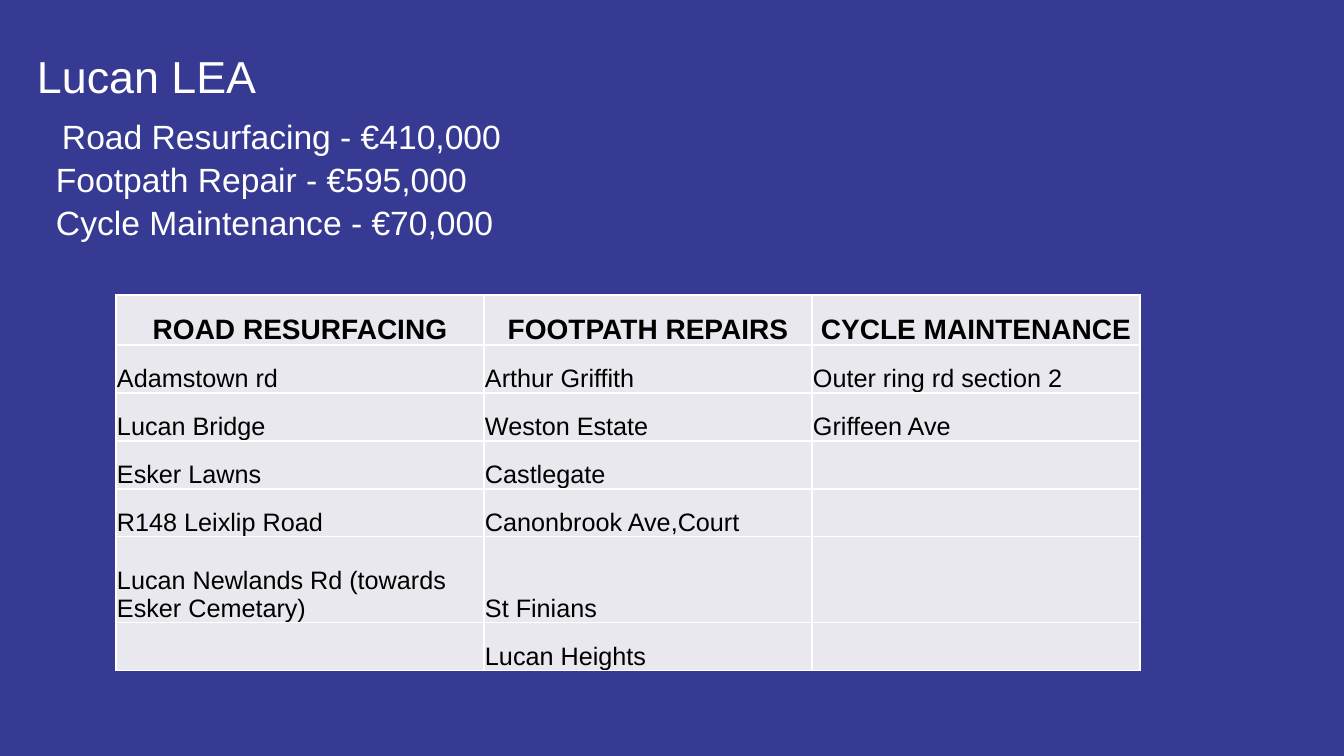
import lxml.etree
import pptx
import pptx.dml.color
import pptx.enum.text
import pptx.oxml.ns
import pptx.util

PX = 914400 / 100.8
COLOURS = {"background": "363A92", "light": "FFFFFF", "cell": "E8E8EE", "ink": "000000"}

HEADING = "Lucan LEA"
# text, left indent in px, space before in points
BUDGETS = [
    ("Road Resurfacing - €410,000", 25, 9),
    ("Footpath Repair - €595,000", 19, 2),
    ("Cycle Maintenance - €70,000", 19, 2),
]
COLUMN_WIDTHS = [368, 328, 328]
ROW_HEIGHTS = [50, 48, 48, 48, 48, 86, 48]
WORKS = [
    ["ROAD RESURFACING", "FOOTPATH REPAIRS", "CYCLE MAINTENANCE"],
    ["Adamstown rd", "Arthur Griffith", "Outer ring rd section 2"],
    ["Lucan Bridge", "Weston Estate", "Griffeen Ave"],
    ["Esker Lawns", "Castlegate", ""],
    ["R148 Leixlip Road", "Canonbrook Ave,Court", ""],
    ["Lucan Newlands Rd (towards Esker Cemetary)", "St Finians", ""],
    ["", "Lucan Heights", ""],
]


def px(length):
    return pptx.util.Emu(round(length * PX))


def colour(name):
    return pptx.dml.color.RGBColor.from_string(COLOURS[name])


class SlideBuilder:
    font_name = "Arial"

    def __init__(self, presentation):
        self.slide = presentation.slides.add_slide(presentation.slide_layouts[6])
        fill = self.slide.background.fill
        fill.solid()
        fill.fore_color.rgb = colour("background")

    def style(self, paragraph, size, colour_name, bold=False):
        for run in paragraph.runs:
            run.font.name = self.font_name
            run.font.size = pptx.util.Pt(size)
            run.font.bold = bold
            run.font.color.rgb = colour(colour_name)

    def title(self, left, top, width, height, heading, budgets):
        box = self.slide.shapes.add_textbox(px(left), px(top), px(width), px(height))
        frame = box.text_frame
        frame.word_wrap = True
        frame.margin_left = frame.margin_right = frame.margin_top = frame.margin_bottom = 0
        frame.text = heading
        self.style(frame.paragraphs[0], 32, "light")
        for text, indent, space in budgets:
            paragraph = frame.add_paragraph()
            paragraph.text = text
            paragraph.space_before = pptx.util.Pt(space)
            properties = paragraph._p.get_or_add_pPr()
            properties.set("marL", str(px(indent)))
            properties.set("indent", "0")
            self.style(paragraph, 24, "light")

    def borders(self, cell):
        properties = cell._tc.get_or_add_tcPr()
        qn = pptx.oxml.ns.qn
        for side in "LRTB":
            line = lxml.etree.SubElement(properties, qn(f"a:ln{side}"), w=str(pptx.util.Pt(1)))
            fill = lxml.etree.SubElement(line, qn("a:solidFill"))
            lxml.etree.SubElement(fill, qn("a:srgbClr"), val=COLOURS["light"])

    def cell(self, cell, text, is_header):
        self.borders(cell)
        cell.fill.solid()
        cell.fill.fore_color.rgb = colour("cell")
        cell.vertical_anchor = pptx.enum.text.MSO_ANCHOR.BOTTOM
        cell.margin_left = cell.margin_right = cell.margin_top = px(1)
        cell.margin_bottom = 0
        if not text:
            return
        cell.text_frame.text = text
        paragraph = cell.text_frame.paragraphs[0]
        if is_header:
            paragraph.alignment = pptx.enum.text.PP_ALIGN.CENTER
        self.style(paragraph, 20 if is_header else 18, "ink", is_header)

    def table(self, left, top, widths, heights, rows):
        frame = self.slide.shapes.add_table(
            len(rows), len(widths), px(left), px(top), px(sum(widths)), px(sum(heights)))
        table = frame.table
        table.first_row = table.horz_banding = False
        for column, width in zip(table.columns, widths):
            column.width = px(width)
        for index, (row, height, texts) in enumerate(zip(table.rows, heights, rows)):
            row.height = px(height)
            for cell, text in zip(row.cells, texts):
                self.cell(cell, text, index == 0)


def main():
    presentation = pptx.Presentation()
    presentation.slide_width = px(1344)
    presentation.slide_height = px(756)
    builder = SlideBuilder(presentation)
    builder.title(37, 49, 730, 184, HEADING, BUDGETS)
    builder.table(116, 295, COLUMN_WIDTHS, ROW_HEIGHTS, WORKS)
    presentation.save("out.pptx")


if __name__ == "__main__":
    main()
